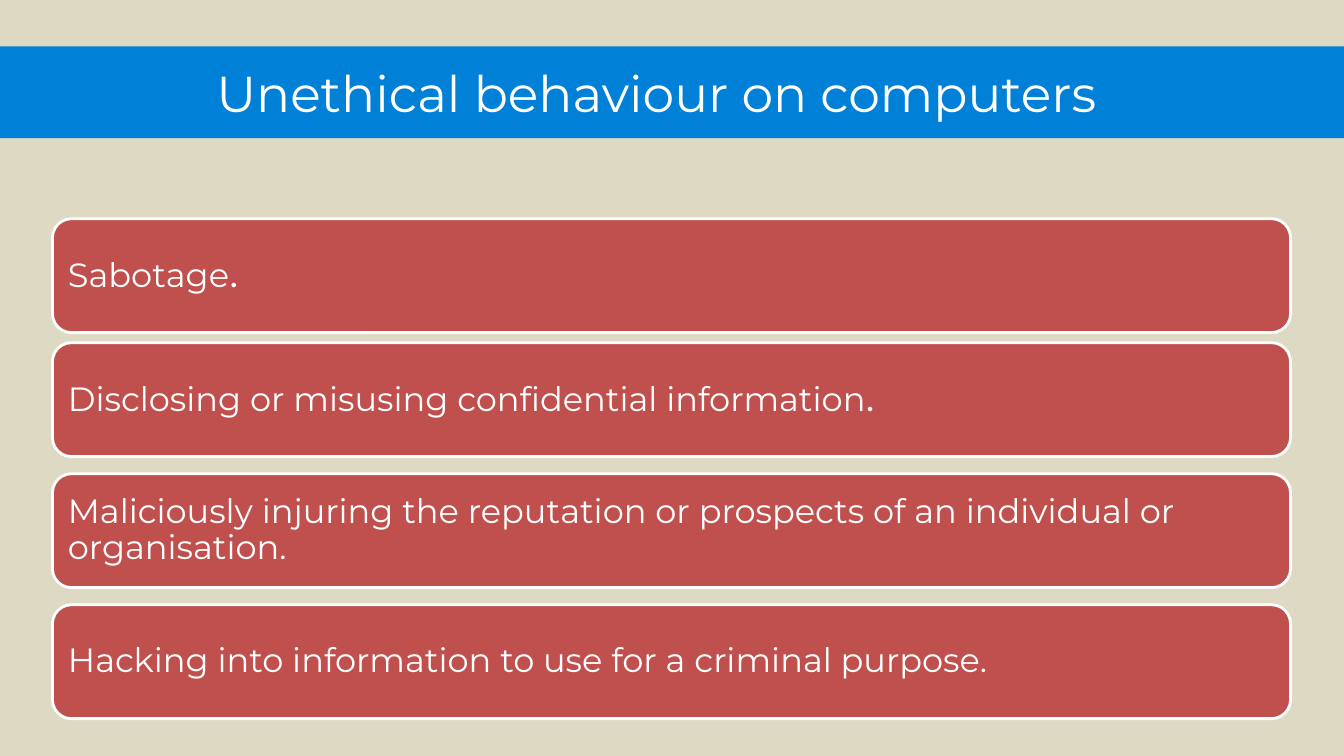
from pptx import Presentation
from pptx.dml.color import RGBColor
from pptx.enum import shapes, text
from pptx.util import Inches, Pt

SAND = RGBColor(0xDD, 0xD9, 0xC3)
BLUE = RGBColor(0x00, 0x80, 0xD7)
RED = RGBColor(0xC0, 0x50, 0x4D)
WHITE = RGBColor(0xFF, 0xFF, 0xFF)

TITLE_ONLY = 5
PAGE_WIDTH, PAGE_HEIGHT = 13.33, 7.5

# Top of each card, its wording, and whether its full stop is set larger
CARDS = [
    (2.17, "Sabotage", True),
    (3.4, "Disclosing or misusing confidential information", True),
    (4.7, "Maliciously injuring the reputation or prospects of an individual "
          "or organisation", False),
    (6.0, "Hacking into information to use for a criminal purpose", False),
]


class SlideBuilder:
    """Holds the style and the current slide."""

    font_name = "Montserrat"
    stop_font_name = "Calibri"

    def __init__(self, deck):
        self.page = deck.slides.add_slide(deck.slide_layouts[TITLE_ONLY])
        fill = self.page.background.fill
        fill.solid()
        fill.fore_color.rgb = SAND

    def style_font(self, font, name, size):
        font.name = name
        font.size = Pt(size)
        font.color.rgb = WHITE

    def add_box(self, kind, left, top, width, height, color):
        box = self.page.shapes.add_shape(
            kind, Inches(left), Inches(top), Inches(width), Inches(height))
        box.shadow.inherit = False
        box.fill.solid()
        box.fill.fore_color.rgb = color
        return box

    def add_band(self, top, height):
        band = self.add_box(shapes.MSO_SHAPE.RECTANGLE,
                            0, top, PAGE_WIDTH, height, BLUE)
        band.line.fill.background()
        # Send the band behind the title
        self.page.shapes._spTree.insert(2, band._element)

    def set_title(self, wording, left, top, width, height):
        title = self.page.shapes.title
        title.left, title.top = Inches(left), Inches(top)
        title.width, title.height = Inches(width), Inches(height)
        frame = title.text_frame
        frame.text = wording
        frame.vertical_anchor = text.MSO_ANCHOR.MIDDLE
        para = frame.paragraphs[0]
        para.alignment = text.PP_ALIGN.CENTER
        self.style_font(para.font, self.font_name, 36)

    def add_card(self, top, wording, large_stop):
        card = self.add_box(shapes.MSO_SHAPE.ROUNDED_RECTANGLE,
                            0.52, top, 12.28, 1.13, RED)
        card.line.color.rgb = WHITE
        card.line.width = Pt(2)
        frame = card.text_frame
        frame.word_wrap = True
        frame.vertical_anchor = text.MSO_ANCHOR.MIDDLE
        frame.margin_left = frame.margin_right = Inches(0.1)
        para = frame.paragraphs[0]
        para.alignment = text.PP_ALIGN.LEFT
        para.line_spacing = 0.9
        self.style_font(para.font, self.font_name, 24)
        if large_stop:
            self.add_span(para, wording, self.font_name, 24)
            self.add_span(para, ".", self.stop_font_name, 27)
        else:
            self.add_span(para, wording + ".", self.font_name, 24)

    def add_span(self, para, wording, name, size):
        span = para.add_run()
        span.text = wording
        self.style_font(span.font, name, size)


def main():
    deck = Presentation()
    deck.slide_width = Inches(PAGE_WIDTH)
    deck.slide_height = Inches(PAGE_HEIGHT)
    builder = SlideBuilder(deck)

    # Heading
    builder.add_band(0.46, 0.91)
    builder.set_title("Unethical behaviour on computers",
                      0.37, 0.29, 12.28, 1.25)

    # Cards
    for top, wording, large_stop in CARDS:
        builder.add_card(top, wording, large_stop)

    deck.save("out.pptx")


if __name__ == "__main__":
    main()
